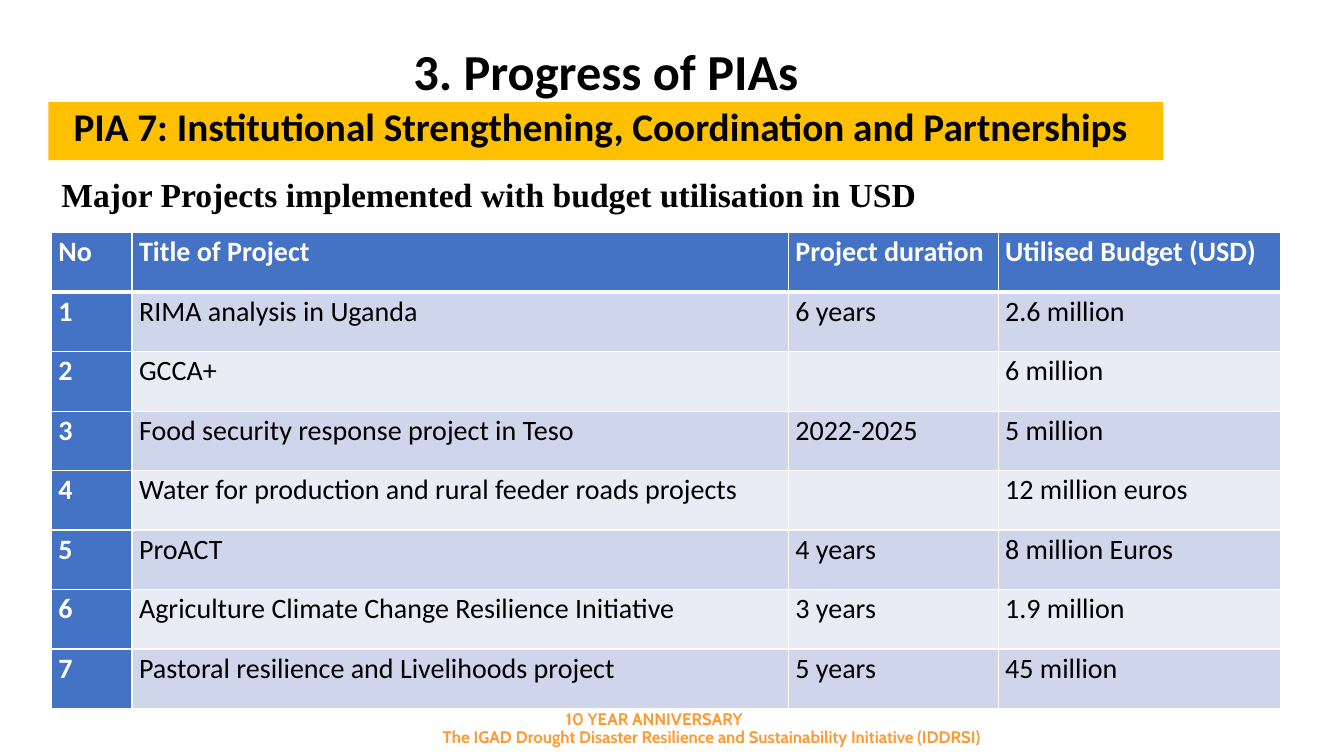
from lxml import etree
from pptx import Presentation
from pptx.dml.color import RGBColor
from pptx.enum.shapes import MSO_SHAPE
from pptx.enum.text import MSO_ANCHOR, MSO_AUTO_SIZE, PP_ALIGN
from pptx.oxml.ns import qn
from pptx.util import Pt

PX = 9144  # EMU in one px, 100 px to the inch
RECT = MSO_SHAPE.RECTANGLE
TOP = MSO_ANCHOR.TOP
FIXED = MSO_AUTO_SIZE.NONE
LEFT, MID, JUST = PP_ALIGN.LEFT, PP_ALIGN.CENTER, PP_ALIGN.JUSTIFY

HUES = {
    "black": "000000", "white": "FFFFFF", "gold": "FFC000",
    "orange": "FF9933", "blue": "4472C4", "dark": "CFD5EA", "light": "E9EBF5",
}
COLS = [80, 651, 208, 280]
ROWS = [
    ("No", "Title of Project", "Project duration", "Utilised Budget (USD)"),
    ("1", "RIMA analysis in Uganda", "6 years", "2.6 million"),
    ("2", "GCCA+", "", "6 million"),
    ("3", "Food security response project in Teso", "2022-2025", "5 million"),
    ("4", "Water for production and rural feeder roads projects", "",
     "12 million euros"),
    ("5", "ProACT", "4 years", "8 million Euros"),
    ("6", "Agriculture Climate Change Resilience Initiative", "3 years",
     "1.9 million"),
    ("7", "Pastoral resilience and Livelihoods project", "5 years",
     "45 million"),
]
FOOT = [
    "10 YEAR ANNIVERSARY",
    "The IGAD Drought Disaster Resilience and Sustainability Initiative (IDDRSI)",
]


def rgb(hue):
    return RGBColor.from_string(HUES[hue])


def scale(box):
    return [n * PX for n in box]


def write(frame, text, size, font="Calibri", hue="black", bold=True,
          align=LEFT, line=None, after=0, indent=0):
    para = frame.paragraphs[0]
    para.alignment = align
    para.space_before, para.space_after = Pt(0), Pt(after)
    if line:
        para.line_spacing = line
    if indent:
        props = para._p.get_or_add_pPr()
        props.set("marL", str(indent * PX))
        props.set("indent", "0")
    run = para.add_run()
    run.text = text
    run.font.size, run.font.name, run.font.bold = Pt(size), font, bold
    run.font.color.rgb = rgb(hue)


def bare(frame):
    """Wrap the text from the top of its box, with no insets."""
    frame.word_wrap, frame.auto_size = True, FIXED
    frame.vertical_anchor = TOP
    frame.margin_left = frame.margin_right = 0
    frame.margin_top = frame.margin_bottom = 0


def note(slide, box, text, size, **style):
    frame = slide.shapes.add_textbox(*scale(box)).text_frame
    frame.word_wrap = True
    write(frame, text, size, **style)


def head(slide, box):
    """Title above a gold banner, both in the width of the box."""
    x, y, w, h = box
    high = 58
    title = slide.shapes.title
    title.left, title.top, title.width, title.height = scale((x, y, w, high))
    bare(title.text_frame)
    write(title.text_frame, "3. Progress of PIAs", 36, align=MID)

    band = slide.shapes.add_shape(RECT, *scale((x, y + h - high, w, high)))
    band.shadow.inherit = False
    band.fill.solid()
    band.fill.fore_color.rgb = rgb("gold")
    band.line.fill.background()
    bare(band.text_frame)
    write(band.text_frame,
          "PIA 7: Institutional Strengthening, Coordination and Partnerships",
          28, align=JUST, after=6, indent=25)


def edge(cell, side, width):
    props = cell._tc.get_or_add_tcPr()
    line = etree.SubElement(props, qn("a:ln" + side), w=str(Pt(width)))
    fill = etree.SubElement(line, qn("a:solidFill"))
    etree.SubElement(fill, qn("a:srgbClr"), val=HUES["white"])


def fill_cell(cell, text, row, col):
    key = row == 0 or col == 0
    cell.margin_left = cell.margin_right = 7 * PX
    cell.margin_top = cell.margin_bottom = 0
    cell.vertical_anchor = TOP
    widths = {"L": 1, "R": 1, "T": 3 if row == 1 else 1, "B": 1 if row else 3}
    for side, width in widths.items():
        edge(cell, side, width)
    cell.fill.solid()
    band = "dark" if row % 2 else "light"
    cell.fill.fore_color.rgb = rgb("blue" if key else band)
    if text:
        write(cell.text_frame, text, 20, hue="white" if key else "black",
              bold=key, line=1.07, after=8)


def grid(slide, box):
    table = slide.shapes.add_table(len(ROWS), len(COLS), *scale(box)).table
    table.first_col = True
    for col, width in zip(table.columns, COLS):
        col.width = width * PX
    for r, texts in enumerate(ROWS):
        table.rows[r].height = box[3] * PX // len(ROWS)
        for c, text in enumerate(texts):
            fill_cell(table.cell(r, c), text, r, c)


def foot(slide, box):
    """Two centred lines, the second one set further right."""
    x, y, w, h = box
    for i, text in enumerate(FOOT):
        note(slide, (x + 57 * i, y + 18 * i, w, h), text, 12,
             font="Cabin", hue="orange", align=MID)


def main():
    deck = Presentation()
    deck.slide_width, deck.slide_height = scale((1333, 750))
    slide = deck.slides.add_slide(deck.slide_layouts[5])
    foot(slide, (315, 698, 668, 30))
    head(slide, (48, 40, 1106, 119))
    grid(slide, (51, 231, sum(COLS), 472))
    note(slide, (51, 165, 888, 51),
         "Major Projects implemented with budget utilisation in USD", 24,
         font="Times New Roman", line=1.07, after=8)
    deck.save("out.pptx")


if __name__ == "__main__":
    main()
